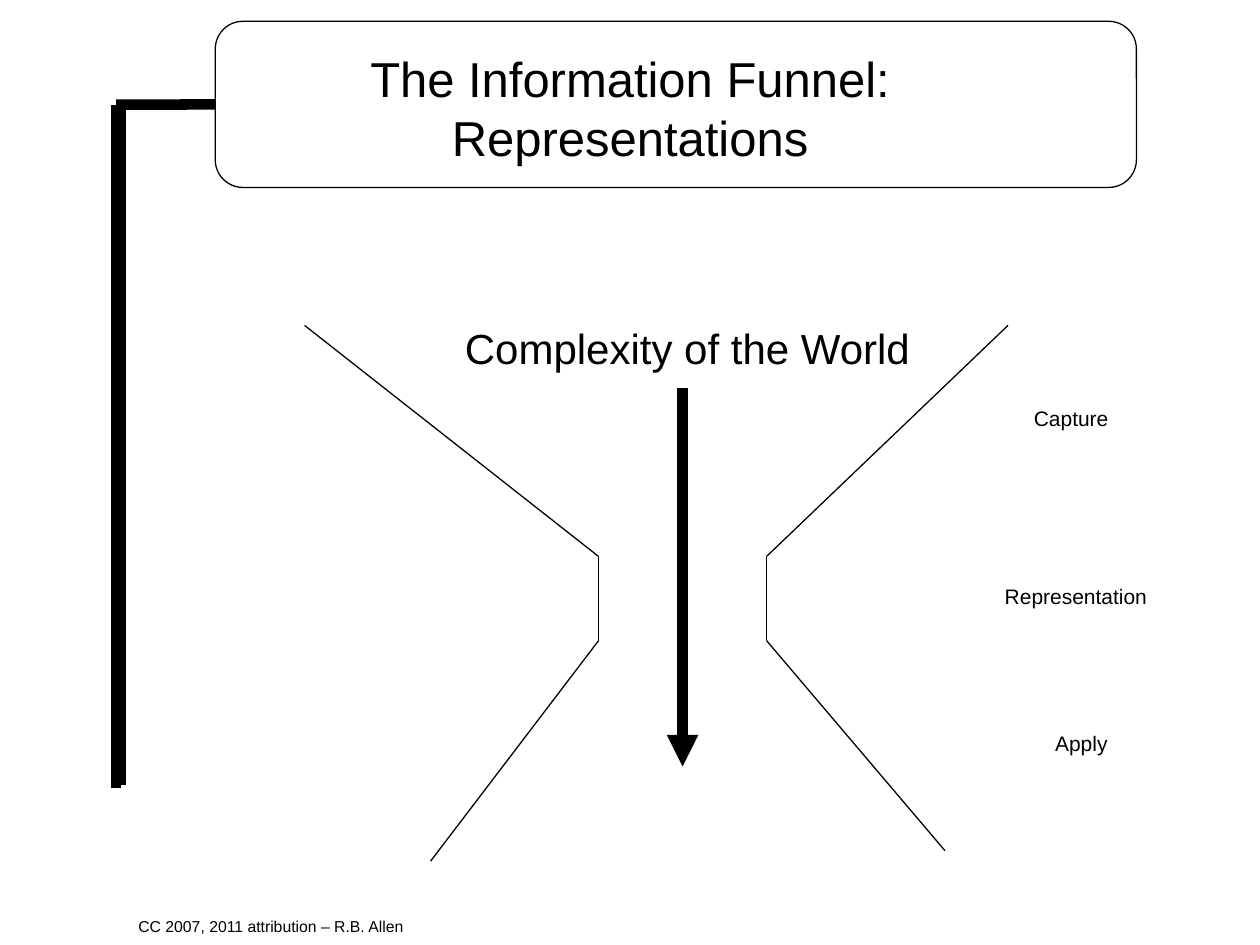
from itertools import pairwise

from lxml.etree import SubElement
from pptx import Presentation
from pptx.dml.color import RGBColor
from pptx.enum.shapes import MSO_CONNECTOR as Link, MSO_SHAPE as Shape
from pptx.enum.text import MSO_ANCHOR as Anchor, MSO_AUTO_SIZE as Fit, PP_ALIGN as Align
from pptx.oxml.ns import qn
from pptx.util import Cm, Pt

BLACK = RGBColor(0, 0, 0)
FONT = "Arial"
THIN, THICK = 0.75, 6

FRAME = [(2.34, 15.88), (2.34, 2.11), (4.34, 2.11)]
FUNNEL = [
    [(6.14, 6.56), (12.07, 11.22), (12.07, 12.91), (8.68, 17.36)],
    [(20.32, 6.56), (15.45, 11.22), (15.45, 12.91), (19.05, 17.15)],
]
STAGES = [
    ("Capture", 20.11, 8.05, 2.97),
    ("Representation", 19.05, 11.63, 5.28),
    ("Apply", 20.11, 14.61, 3.38),
]


def place(shape, left, top, width, height):
    shape.left, shape.top = Cm(left), Cm(top)
    shape.width, shape.height = Cm(width), Cm(height)


def write(shape, text, size, align=Align.LEFT):
    frame = shape.text_frame
    frame.word_wrap = True
    frame.auto_size = Fit.NONE
    frame.vertical_anchor = Anchor.TOP
    frame.text = text
    para = frame.paragraphs[0]
    para.alignment = align
    para.space_before = Pt(0)
    for run in para.runs:
        run.font.name = FONT
        run.font.size = Pt(size)
        run.font.color.rgb = BLACK
    return frame


def add_line(slide, start, end, width):
    line = slide.shapes.add_connector(Link.STRAIGHT, *map(Cm, start + end))
    line.line.color.rgb = BLACK
    line.line.width = Pt(width)
    SubElement(line._element.spPr, qn("a:effectLst"))
    return line


def add_path(slide, points, width):
    """Draw straight lines from point to point and return them."""
    return [add_line(slide, a, b, width) for a, b in pairwise(points)]


def add_arrow(slide, start, end, width):
    arrow = add_line(slide, start, end, width)
    SubElement(arrow.line._get_or_add_ln(), qn("a:tailEnd"), type="triangle")


def add_label(slide, text, left, top, width, height, size, align):
    box = slide.shapes.add_textbox(Cm(left), Cm(top), Cm(width), Cm(height))
    write(box, text, size, align)


def add_frame(slide):
    box = slide.shapes.add_shape(
        Shape.FLOWCHART_ALTERNATE_PROCESS, Cm(4.34), Cm(0.43), Cm(18.57), Cm(3.35))
    box.shadow.inherit = False
    box.fill.background()
    box.line.color.rgb = BLACK
    box.line.width = Pt(THIN)
    add_line(slide, (2.44, 15.82), (2.44, 2.08), THICK)
    add_path(slide, FRAME, THICK)[-1].end_connect(box, 1)


def fill_title(slide):
    title = slide.shapes.title
    place(title, 1.27, 0.76, 22.86, 3.18)
    frame = write(title, "The Information Funnel:\vRepresentations", 28, Align.CENTER)
    frame.margin_top = Cm(0.22)


def fill_body(slide):
    body = slide.placeholders[1]
    place(body, 1.27, 4.45, 22.86, 12.57)
    frame = write(body, "Complexity of the World", 24)
    frame.margin_left, frame.margin_top = Cm(8.1), Cm(2.06)
    props = frame.paragraphs[0]._p.get_or_add_pPr()
    props.set("marL", "0")
    props.set("indent", "0")
    SubElement(props, qn("a:buNone"))


def main():
    deck = Presentation()
    deck.slide_width, deck.slide_height = Cm(25.4), Cm(19.05)
    slide = deck.slides.add_slide(deck.slide_layouts[1])
    add_frame(slide)
    fill_title(slide)
    fill_body(slide)
    add_label(slide, "CC 2007, 2011 attribution – R.B. Allen",
              2.54, 18.36, 14.17, 0.69, 9, Align.LEFT)
    for side in FUNNEL:
        add_path(slide, side, THIN)
    add_arrow(slide, (13.76, 7.83), (13.76, 15.45), THICK)
    for text, left, top, width in STAGES:
        add_label(slide, text, left, top, width, 0.76, 12, Align.CENTER)
    deck.save("out.pptx")


if __name__ == "__main__":
    main()
